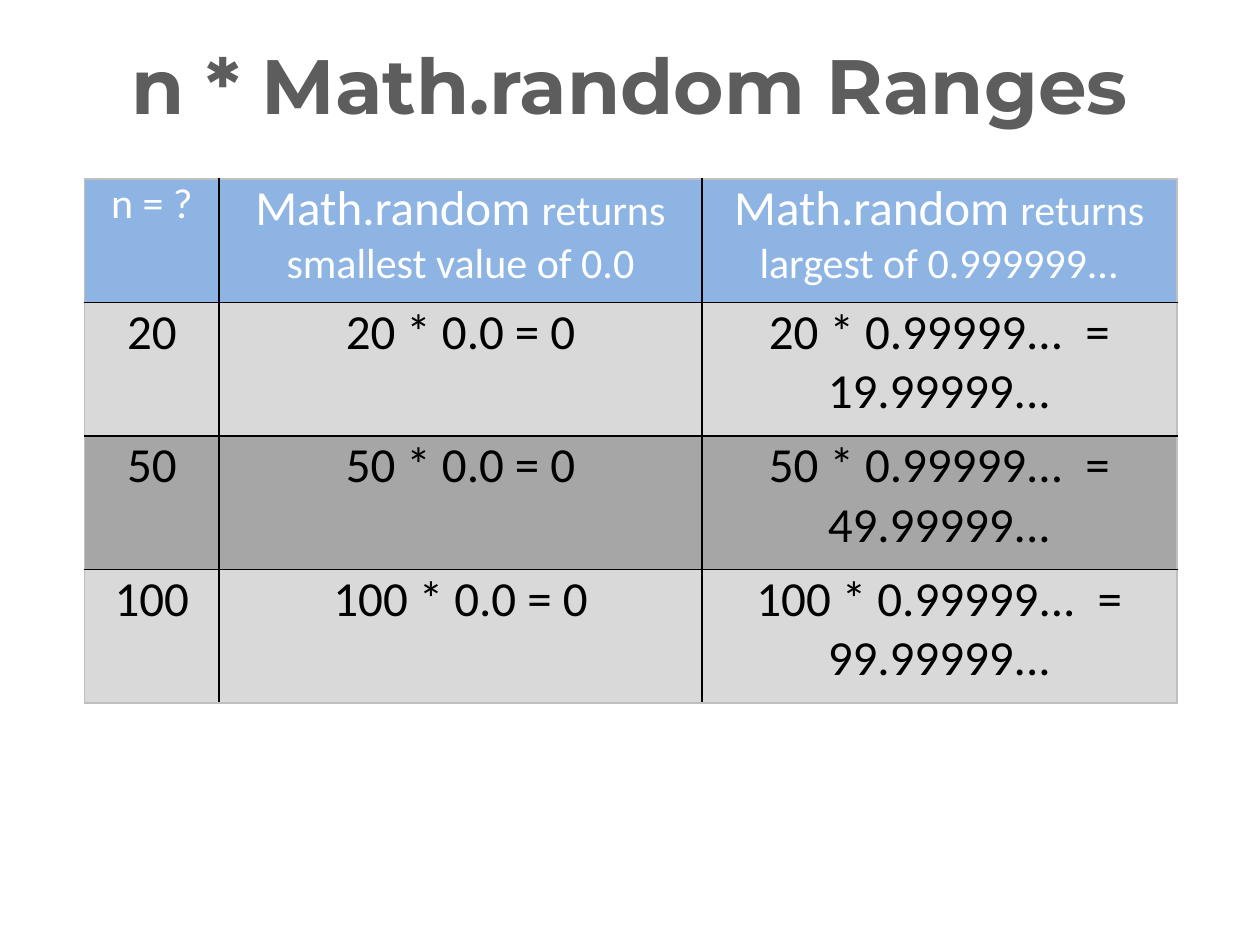
import pptx
import pptx.util
import pptx.dml.color
import pptx.enum.text
import pptx.oxml
import pptx.oxml.ns

Inches, Pt = pptx.util.Inches, pptx.util.Pt
RGB = pptx.dml.color.RGBColor.from_string
CENTER = pptx.enum.text.PP_ALIGN.CENTER

THEME = {
    "title_font": "Montserrat", "body_font": "Calibri",
    "title_size": 44, "large": 28, "small": 24,
    "title": "5D5D5D", "header_text": "FFFFFF", "body_text": "000000",
    "header_fill": "8EB4E3", "light_fill": "D9D9D9", "dark_fill": "A6A6A6",
    "grid": "000000", "frame": "BFBFBF",
}


def style_font(font, face, size, color, bold=False):
    font.name, font.size, font.bold = face, Pt(size), bold
    font.color.rgb = RGB(color)


def add_border(cell, side, color):
    cell.fill  # the cell properties element exists from here on
    line = pptx.oxml.parse_xml(
        f'<a:ln{side} {pptx.oxml.ns.nsdecls("a")} w="12700"><a:solidFill>'
        f'<a:srgbClr val="{color}"/></a:solidFill></a:ln{side}>')
    cell._tc.get_or_add_tcPr().append(line)


deck = pptx.Presentation()
deck.slide_width, deck.slide_height = Inches(10), Inches(7.5)
slide = deck.slides.add_slide(deck.slide_layouts[5])

# Title across the top of the slide
title = slide.shapes.title
title.left, title.top = 0, 0
title.width, title.height = deck.slide_width, Inches(1.33)
frame = title.text_frame
frame.word_wrap = True
frame.auto_size = pptx.enum.text.MSO_AUTO_SIZE.NONE
frame.vertical_anchor = pptx.enum.text.MSO_ANCHOR.MIDDLE
heading = frame.paragraphs[0]
heading.text = "n * Math.random Ranges"
heading.alignment = CENTER
style_font(heading.font, THEME["title_font"], THEME["title_size"], THEME["title"], True)

# Content: each cell is a list of paragraphs, each paragraph a list of (text, size)
large, small = THEME["large"], THEME["small"]
call = [("Math.random ", large), ("returns", small)]
rows = [[
    [[("n = ?", small)]],
    [call, [("smallest value of 0.0", small)]],
    [call, [("largest of 0.999999...", small)]],
]]
for n in (20, 50, 100):
    texts = (f"{n}", f"{n} * 0.0 = 0", f"{n} * 0.99999...  = {n - 1}.99999...")
    rows.append([[[(text, large)]] for text in texts])

# Table grid
column_widths = [1.07, 3.83, 3.77]
row_heights = [0.98] + [1.06] * 3
ranges = slide.shapes.add_table(
    len(rows), len(column_widths), Inches(0.67), Inches(1.42),
    Inches(sum(column_widths)), Inches(sum(row_heights))).table
ranges.first_row = ranges.horz_banding = False
for column, width in zip(ranges.columns, column_widths):
    column.width = Inches(width)
for row, height in zip(ranges.rows, row_heights):
    row.height = Inches(height)

# Cells: black inner rules, pale outer frame, alternating row fills
last_row, last_column = len(rows) - 1, len(column_widths) - 1
for r, row in enumerate(rows):
    if r == 0:
        fill, color = THEME["header_fill"], THEME["header_text"]
    else:
        fill = THEME["light_fill"] if r % 2 else THEME["dark_fill"]
        color = THEME["body_text"]
    for c, paragraphs in enumerate(row):
        cell = ranges.cell(r, c)
        cell.margin_left = cell.margin_right = Inches(0.07)
        cell.margin_top = cell.margin_bottom = 0
        outer = {"L": c == 0, "R": c == last_column, "T": r == 0, "B": r == last_row}
        for side, at_edge in outer.items():
            add_border(cell, side, THEME["frame"] if at_edge else THEME["grid"])
        cell.fill.solid()
        cell.fill.fore_color.rgb = RGB(fill)
        for i, runs in enumerate(paragraphs):
            text_frame = cell.text_frame
            paragraph = text_frame.add_paragraph() if i else text_frame.paragraphs[0]
            paragraph.alignment = CENTER
            style_font(paragraph.font, THEME["body_font"], runs[0][1], color)
            for text, size in runs:
                run = paragraph.add_run()
                run.text = text
                if size != runs[0][1]:
                    run.font.size = Pt(size)

deck.save("out.pptx")
